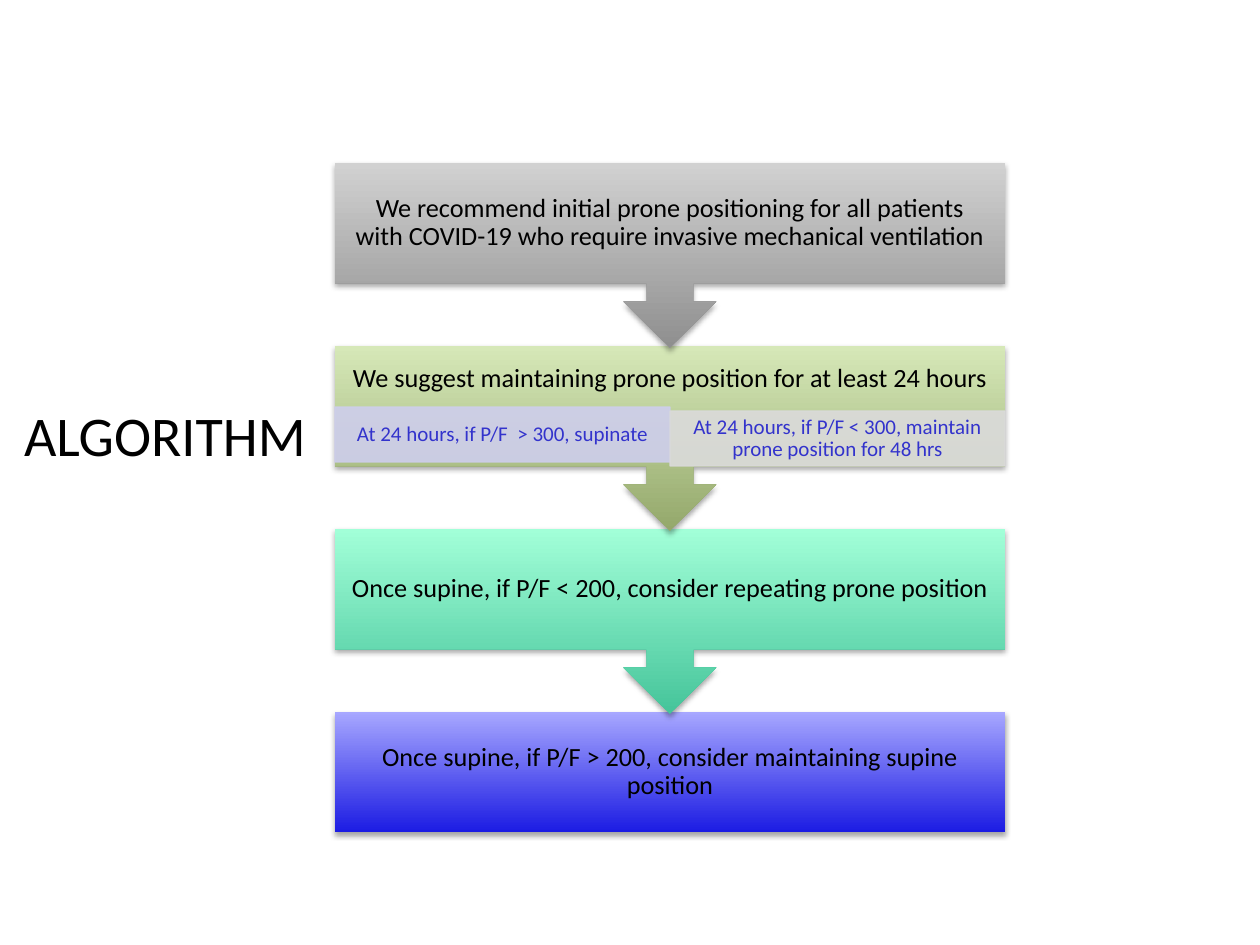
from dataclasses import dataclass

from lxml.etree import SubElement
from pptx import Presentation
from pptx.dml.color import RGBColor
from pptx.enum.shapes import MSO_SHAPE
from pptx.enum.text import MSO_ANCHOR, PP_ALIGN
from pptx.oxml.ns import qn
from pptx.util import Emu, Pt

EMU_PER_PX = 914400 / 126
FONT = "Calibri"

# Column of steps
LEFT, TOP, WIDTH = 335, 163, 670
BODY_HEIGHT, CALLOUT_HEIGHT, PITCH = 120, 185, 183
BRANCH_HEIGHT = 55


@dataclass
class Step:
    text: str
    light: str
    dark: str
    has_arrow: bool = True
    reserved: int = 0  # space kept free below the text


@dataclass
class Branch:
    text: str
    colour: str
    left: int
    top: int


STEPS = [
    Step("We recommend initial prone positioning for all patients with COVID-19 "
         "who require invasive mechanical ventilation", "D1D1D1", "8F8F8F"),
    Step("We suggest maintaining prone position for at least 24 hours",
         "D6E8B8", "94A86B", reserved=55),
    Step("Once supine, if P/F < 200, consider repeating prone position",
         "A2FFD8", "45C49A"),
    Step("Once supine, if P/F > 200, consider maintaining supine position",
         "A7A7FF", "1C1CE3", has_arrow=False),
]
BRANCHES = [
    Branch("At 24 hours, if P/F  > 300, supinate", "CECEEC", LEFT, 407),
    Branch("At 24 hours, if P/F < 300, maintain prone position for 48 hrs",
           "DBDBDB", LEFT + WIDTH // 2, 411),
]


def px(length: int) -> Emu:
    return Emu(round(length * EMU_PER_PX))


def rgb(colour: str) -> RGBColor:
    return RGBColor.from_string(colour)


def write_text(shape, text: str, size: int, colour: str,
               insets: tuple[int, int, int, int]) -> None:
    """Centred text; insets are left, top, right, bottom."""
    frame = shape.text_frame
    frame.text = text
    frame.word_wrap = True
    frame.vertical_anchor = MSO_ANCHOR.MIDDLE
    (frame.margin_left, frame.margin_top,
     frame.margin_right, frame.margin_bottom) = map(px, insets)
    paragraph = frame.paragraphs[0]
    paragraph.alignment = PP_ALIGN.CENTER
    paragraph.line_spacing = 0.9
    font = paragraph.runs[0].font
    font.name, font.size = FONT, Pt(size)
    font.color.rgb = rgb(colour)


def add_soft_shadow(shape) -> None:
    shape.shadow.inherit = False
    effects = shape._element.spPr.find(qn("a:effectLst"))
    shadow = SubElement(effects, qn("a:outerShdw"), blurRad=str(Pt(3)),
                        dist=str(Pt(1.8)), dir="5400000", rotWithShape="0")
    colour = SubElement(shadow, qn("a:srgbClr"), val="000000")
    SubElement(colour, qn("a:alpha"), val="35000")


def draw_step(slide, step: Step, top: int) -> None:
    kind = MSO_SHAPE.DOWN_ARROW_CALLOUT if step.has_arrow else MSO_SHAPE.RECTANGLE
    height = CALLOUT_HEIGHT if step.has_arrow else BODY_HEIGHT
    shape = slide.shapes.add_shape(kind, px(LEFT), px(top), px(WIDTH), px(height))
    if step.has_arrow:
        for index, value in enumerate((0.25, 0.25, 0.25, 0.65)):
            shape.adjustments[index] = value
    shape.line.fill.background()
    shape.fill.gradient()
    shape.fill.gradient_angle = 90
    for stop, colour in zip(shape.fill.gradient_stops, (step.dark, step.light)):
        stop.color.rgb = rgb(colour)
    add_soft_shadow(shape)
    write_text(shape, step.text, 15, "000000", (15, 15, 15, 15 + step.reserved))


def draw_branch(slide, branch: Branch) -> None:
    shape = slide.shapes.add_shape(MSO_SHAPE.RECTANGLE, px(branch.left), px(branch.top),
                                   px(WIDTH // 2), px(BRANCH_HEIGHT))
    shape.shadow.inherit = False
    shape.fill.solid()
    shape.fill.fore_color.rgb = rgb(branch.colour)
    shape.line.color.rgb = rgb(branch.colour)
    shape.line.width = Pt(0.75)
    for colour in shape._element.spPr.iter(qn("a:srgbClr")):
        SubElement(colour, qn("a:alpha"), val="90000")
    write_text(shape, branch.text, 12, "3333CC", (11, 3, 11, 3))


def draw_heading(slide, text: str) -> None:
    box = slide.shapes.add_textbox(px(18), px(394), px(299), px(81))
    frame = box.text_frame
    frame.text = text
    frame.word_wrap = False
    frame.margin_left = frame.margin_right = px(6)
    frame.margin_top = frame.margin_bottom = px(6)
    font = frame.paragraphs[0].runs[0].font
    font.name, font.size = FONT, Pt(32)
    font.color.rgb = rgb("000000")


def main() -> None:
    presentation = Presentation()
    presentation.slide_width, presentation.slide_height = px(1260), px(945)
    slide = presentation.slides.add_slide(presentation.slide_layouts[6])

    # Steps from the bottom up, so each arrow tip lies over the next step
    for index, step in reversed(list(enumerate(STEPS))):
        draw_step(slide, step, TOP + index * PITCH)

    # Outcomes inside the second step
    for branch in BRANCHES:
        draw_branch(slide, branch)

    # Heading beside the flow
    draw_heading(slide, "ALGORITHM")
    presentation.save("out.pptx")


if __name__ == "__main__":
    main()
